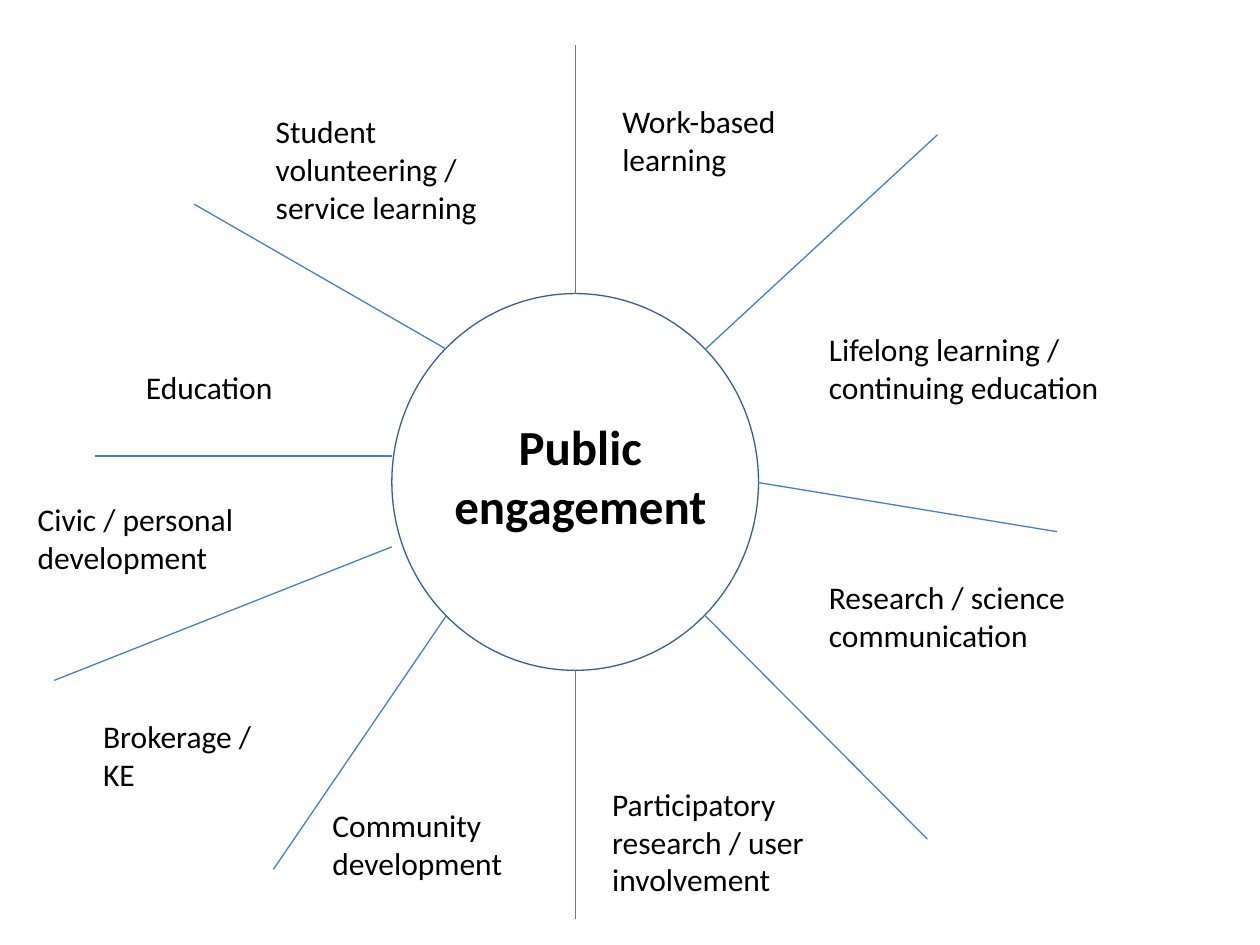
"""Build a slide of the strands that radiate from public engagement."""
from lxml import etree
from pptx import Presentation
from pptx.dml.color import RGBColor
from pptx.enum.shapes import MSO_CONNECTOR, MSO_SHAPE
from pptx.enum.text import MSO_AUTO_SIZE, PP_ALIGN
from pptx.oxml.ns import qn
from pptx.util import Inches, Pt

STRAIGHT = MSO_CONNECTOR.STRAIGHT
OVAL = MSO_SHAPE.OVAL
GROW = MSO_AUTO_SIZE.SHAPE_TO_FIT_TEXT
LEFT = PP_ALIGN.LEFT
CENTER = PP_ALIGN.CENTER


def color(code):
    return RGBColor.from_string(code)


def add_label(text, left, top, width, height, size=18, bold=False, align=LEFT):
    box = page.shapes.add_textbox(
        Inches(left), Inches(top), Inches(width), Inches(height))
    frame = box.text_frame
    frame.word_wrap = True
    frame.auto_size = GROW
    para = frame.paragraphs[0]
    para.text = text
    para.alignment = align
    para.font.name = "Calibri"
    para.font.size = Pt(size)
    para.font.bold = bold
    para.font.color.rgb = color("000000")


deck = Presentation()
deck.slide_width = Inches(10)
deck.slide_height = Inches(7.5)
page = deck.slides.add_slide(deck.slide_layouts[6])

hub = page.shapes.add_shape(
    OVAL, Inches(3.11), Inches(2.33), Inches(2.91), Inches(2.99))
hub.shadow.inherit = False
hub.fill.solid()
hub.fill.fore_color.rgb = color("FFFFFF")
hub.line.color.rgb = color("3A5F8C")
hub.line.width = Pt(0.75)

spokes = [
    (5.6, 2.77, 7.44, 1.07),
    (6.02, 3.83, 8.39, 4.22),
    (4.57, 2.33, 4.57, 0.36),
    (3.54, 2.77, 1.54, 1.62),
    (3.11, 3.62, 0.75, 3.62),
    (3.54, 4.89, 2.17, 6.9),
    (4.57, 5.32, 4.57, 7.29),
    (5.6, 4.89, 7.36, 6.66),
    (3.11, 4.34, 0.43, 5.4),
]
for ends in spokes:
    spoke = page.shapes.add_connector(STRAIGHT, *[Inches(end) for end in ends])
    spoke.line.color.rgb = color("4B7EBC")
    spoke.line.width = Pt(0.75)
    etree.SubElement(spoke.element.spPr, qn("a:effectLst"))

strands = [
    ("Lifelong learning / continuing education", 6.48, 2.57, 2.85, 0.71),
    ("Work-based learning", 4.84, 0.76, 1.81, 0.71),
    ("Research / science communication", 6.48, 4.54, 2.22, 0.71),
    ("Participatory research / user involvement", 4.76, 6.18, 1.89, 1.01),
    ("Student volunteering / service learning", 2.09, 0.84, 1.97, 1.01),
    ("Education", 1.06, 2.87, 1.57, 0.4),
    ("Civic / personal development", 0.2, 3.92, 2.51, 0.71),
    ("Community development", 2.54, 6.35, 1.68, 0.71),
    ("Brokerage / KE", 0.72, 5.64, 1.68, 0.71),
]
for strand in strands:
    add_label(*strand)
add_label("Public engagement", 3.5, 3.26, 2.21, 1.04, 28, True, CENTER)

deck.save("out.pptx")
